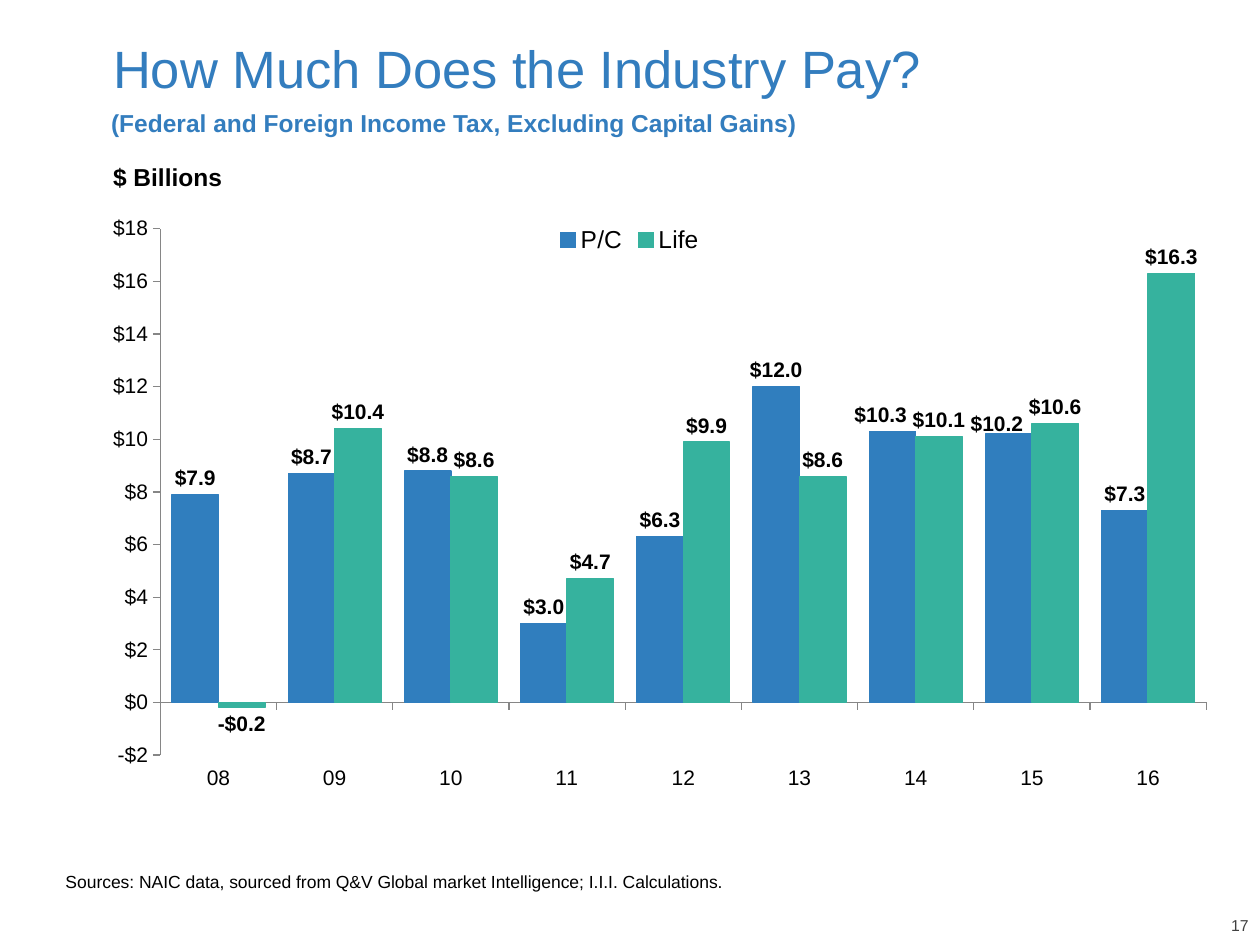
from lxml.etree import SubElement
from pptx import Presentation
from pptx.chart.data import CategoryChartData
from pptx.dml.color import RGBColor
from pptx.enum.chart import (XL_CHART_TYPE, XL_LABEL_POSITION, XL_LEGEND_POSITION,
                             XL_TICK_LABEL_POSITION, XL_TICK_MARK)
from pptx.enum.text import MSO_ANCHOR, MSO_AUTO_SIZE, PP_ALIGN
from pptx.oxml import parse_xml
from pptx.oxml.ns import nsdecls, qn
from pptx.util import Cm, Pt

BLUE, TEAL, HEADING, BLACK, GREY = "307EBE", "36B29E", "337DBE", "000000", "404040"
AXIS_LINE = "868686"
YEARS = ["08", "09", "10", "11", "12", "13", "14", "15", "16"]
TAXES = {
    "P/C": (BLUE, [7.9, 8.7, 8.8, 3.0, 6.3, 12.0, 10.3, 10.2, 7.3]),
    "Life": (TEAL, [-0.2, 10.4, 8.6, 4.7, 9.9, 8.6, 10.1, 10.6, 16.3]),
}
# Crowded labels: (series, year) -> shift as a share of the chart size
LABEL_SHIFTS = {("P/C", "14"): (-0.01, 0), ("P/C", "15"): (-0.01, 0.01)}
LABEL_FORMAT = '"$"#,##0.0'


def color(hex_value):
    return RGBColor.from_string(hex_value)


def set_all(target, values):
    for attribute, value in values.items():
        setattr(target, attribute, value)


def set_font(font, size, hex_value=BLACK, bold=False):
    set_all(font, dict(name="Arial", size=Pt(size), bold=bold))
    font.color.rgb = color(hex_value)


def place(shape, left, top, width, height):
    set_all(shape, dict(left=Cm(left), top=Cm(top), width=Cm(width), height=Cm(height)))


def write(shape, text, size, hex_value=BLACK, bold=False, align=PP_ALIGN.LEFT,
          anchor=MSO_ANCHOR.TOP, inset=(0.25, 0.13), spacing=0.9):
    side, end = map(Cm, inset)
    frame = shape.text_frame
    set_all(frame, dict(word_wrap=True, auto_size=MSO_AUTO_SIZE.NONE,
                        vertical_anchor=anchor, margin_left=side, margin_right=side,
                        margin_top=end, margin_bottom=end))
    paragraph = frame.paragraphs[0]
    set_all(paragraph, dict(alignment=align, line_spacing=spacing, space_before=Pt(0)))
    run = paragraph.add_run()
    run.text = text
    set_font(run.font, size, hex_value, bold)


def add_text(slide, box, text, size, **style):
    write(slide.shapes.add_textbox(*map(Cm, box)), text, size, **style)


def add_header(slide, left, top, width):
    title = slide.shapes.title
    place(title, left, top, width, 1.24)
    write(title, "How Much Does the Industry Pay?", 30, HEADING)
    add_text(slide, (left + 0.21, top + 1.5, width + 1.5, 0.53),
             "(Federal and Foreign Income Tax, Excluding Capital Gains)", 14,
             hex_value=HEADING, bold=True, inset=(0, 0))
    add_text(slide, (left, top + 2.46, 2.92, 0.79), "$ Billions", 14,
             bold=True, anchor=MSO_ANCHOR.MIDDLE)


def manual_layout(**values):
    layout = parse_xml(f"<c:layout {nsdecls('c')}/>")
    manual = SubElement(layout, qn("c:manualLayout"))
    for tag, value in values.items():
        SubElement(manual, qn(f"c:{tag}")).set("val", str(value))
    return layout


def shift_label(point, x, y):
    label = point.data_label
    set_font(label.font, 12, bold=True)
    label.position = XL_LABEL_POSITION.OUTSIDE_END
    index = label.font._element.getparent().getparent().getparent()
    while index.tag != qn("c:dLbl"):
        index = index.getparent()
    number_format = parse_xml(f"<c:numFmt {nsdecls('c')} sourceLinked='0'/>")
    number_format.set("formatCode", LABEL_FORMAT)
    index.insert(1, manual_layout(x=x, y=y))
    index.insert(2, number_format)


def format_series(series, fill):
    series.format.fill.solid()
    series.format.fill.fore_color.rgb = color(fill)
    series.format.line.color.rgb = color(fill)
    series.format.line.width = Pt(0.75)
    series.invert_if_negative = False
    labels = series.data_labels
    set_all(labels, dict(show_value=True, position=XL_LABEL_POSITION.OUTSIDE_END,
                         number_format=LABEL_FORMAT, number_format_is_linked=False))
    set_font(labels.font, 12, bold=True)
    for (name, year), shift in LABEL_SHIFTS.items():
        if name == series.name:
            shift_label(series.points[YEARS.index(year)], *shift)


def add_tax_chart(slide, left, top, width, height):
    data = CategoryChartData()
    data.categories = YEARS
    for name, (_, amounts) in TAXES.items():
        data.add_series(name, amounts)
    chart = slide.shapes.add_chart(XL_CHART_TYPE.COLUMN_CLUSTERED,
                                   *map(Cm, (left, top, width, height)), data).chart
    set_font(chart.font, 12)
    set_all(chart, dict(has_title=False, has_legend=True))
    set_all(chart.legend, dict(position=XL_LEGEND_POSITION.TOP, include_in_layout=False))
    set_font(chart.legend.font, 14)

    # Columns
    columns = chart.plots[0]
    set_all(columns, dict(gap_width=50, overlap=0, vary_by_categories=False))
    for series in columns.series:
        format_series(series, TAXES[series.name][0])

    # Axes
    amounts, years = chart.value_axis, chart.category_axis
    for axis in (amounts, years):
        set_all(axis, dict(has_major_gridlines=False, major_tick_mark=XL_TICK_MARK.OUTSIDE))
        axis.format.line.color.rgb = color(AXIS_LINE)
        set_font(axis.tick_labels.font, 12)
    set_all(amounts, dict(minimum_scale=-2, maximum_scale=18, major_unit=2))
    set_all(amounts.tick_labels, dict(number_format='"$"#,##0', number_format_is_linked=False))
    years.tick_label_position = XL_TICK_LABEL_POSITION.LOW

    # Plot area
    plot_area = chart._chartSpace.chart.plotArea
    for layout in plot_area.findall(qn("c:layout")):
        plot_area.remove(layout)
    plot_area.insert(0, manual_layout(layoutTarget="inner", xMode="edge", yMode="edge",
                                      x=0.102, y=0.028, w=0.887, h=0.867))


def add_footer(slide, left, top, width, height):
    sources = slide.placeholders[1]
    place(sources, left, top, width, height)
    write(sources, "Sources: NAIC data, sourced from Q&V Global market Intelligence; "
          "I.I.I. Calculations.", 10, anchor=MSO_ANCHOR.BOTTOM, inset=(0.25, 0),
          spacing=0.85)
    properties = sources.text_frame.paragraphs[0]._p.get_or_add_pPr()
    properties.set("marL", "0")
    properties.set("indent", "0")
    SubElement(properties, qn("a:buNone"))
    # Page number
    add_text(slide, (left + 22.88, top + 1.76, 1.22, 0.33), "17", 9, hex_value=GREY,
             align=PP_ALIGN.RIGHT, anchor=MSO_ANCHOR.BOTTOM, inset=(0, 0))


def main():
    deck = Presentation()
    set_all(deck, dict(slide_width=Cm(25.4), slide_height=Cm(19.05)))
    slide = deck.slides.add_slide(deck.slide_layouts[1])
    add_header(slide, 2.03, 0.74, 16.97)
    add_tax_chart(slide, 0.81, 4.27, 23.77, 12.24)
    add_footer(slide, 1.07, 16.76, 23.5, 1.22)
    deck.save("out.pptx")


if __name__ == "__main__":
    main()
